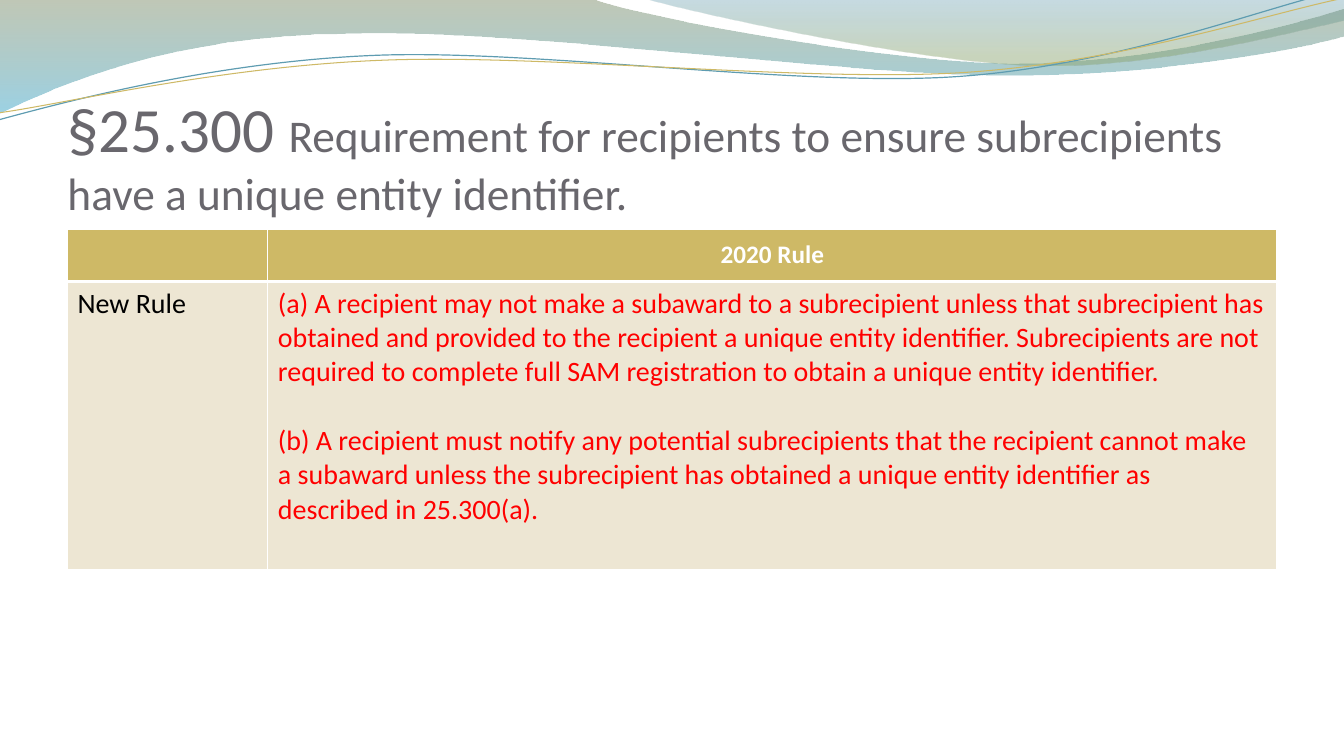
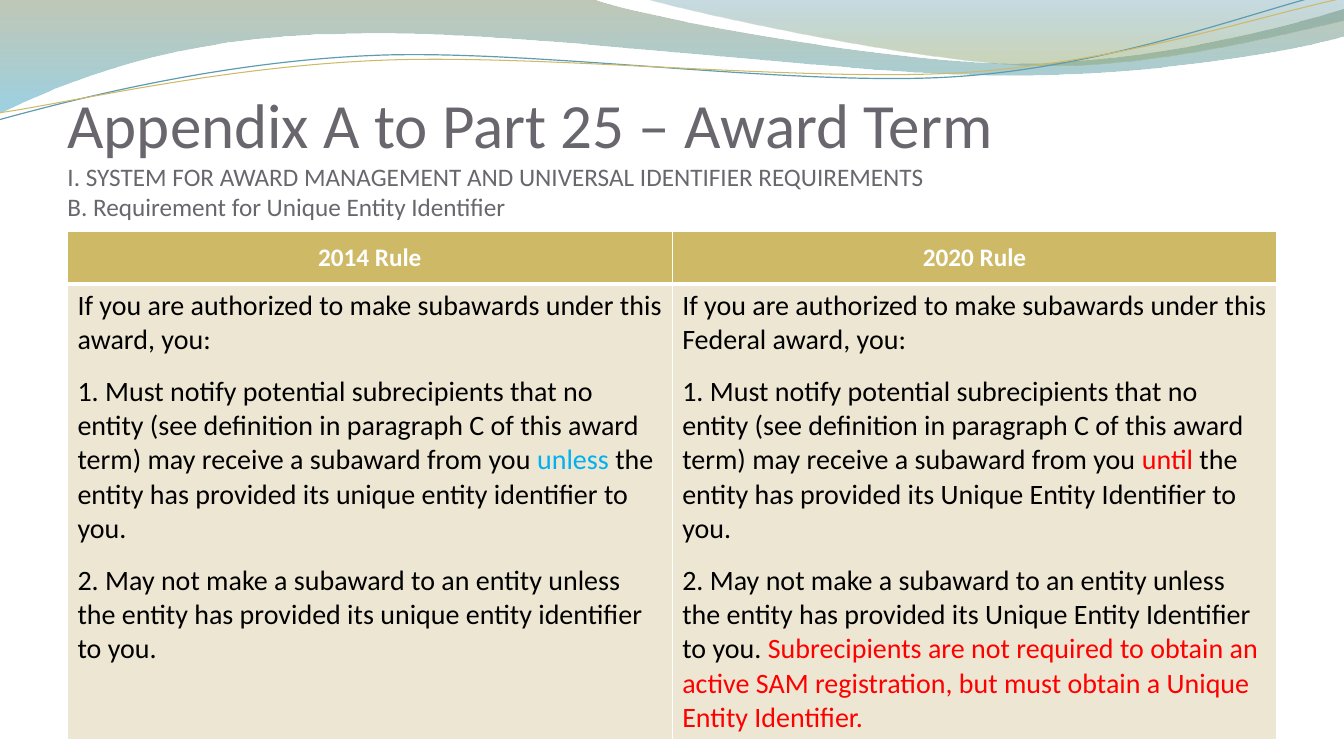
import pptx
import pptx.util
import pptx.dml.color
import pptx.enum.text
import pptx.oxml
import pptx.oxml.ns

Cm, Pt = pptx.util.Cm, pptx.util.Pt
FONT = "Calibri"
COLORS = {
    "title": "69676D", "gold": "CEB966", "sand": "EDE6D3", "white": "FFFFFF",
    "black": "000000", "red": "FF0000", "sky": "00B0F0", "teal": "5E9CB1",
    "moss": "74855E", "aqua": "4AACCE", "slate": "45889F", "leaf": "8AA36D",
}
RGB = {name: pptx.dml.color.RGBColor.from_string(value) for name, value in COLORS.items()}
MARGIN, CONTENT_WIDTH = 1.7, 30.48
HEADER_HEIGHT = 1.32

# Waves in cm: a pair is a straight step, six numbers are a Bezier curve.
# Fill stops are (position, colour, opacity in percent).
WAVES = [
    {"start": (0, -0.03),
     "steps": [(14.91, -0.03), (16.1, 0.43, 22.48, 1.6, 25.68, 1.6),
               (28.91, 1.6, 32.46, 0.66, 33.86, 0.23), (33.91, 0.91),
               (33.3, 1.12, 29.46, 1.93, 25.25, 1.9),
               (21.06, 1.9, 12.93, 0.71, 8.71, 0.86),
               (4.37, 0.89, 1.55, 2.11, -0.03, 2.87)],
     "stops": [(0, "moss", 45), (1, "aqua", 55)]},
    {"start": (16.23, -0.03),
     "steps": [(17.25, 0.28, 23.09, 1.57, 26.04, 1.65),
               (28.98, 1.75, 32.56, 0.81, 33.86, 0.53), (33.86, 0)],
     "stops": [(0, "slate", 30), (0.8, "leaf", 45)]},
    {"start": (-0.03, 3.02),
     "steps": [(1.63, 2.57, 5.36, 1.57, 9.37, 1.4),
               (13.39, 1.22, 20.07, 2.21, 24.13, 1.93),
               (28.19, 1.65, 31.8, 0.2, 33.81, -0.25)],
     "line": ("teal", 0.85)},
    {"start": (0, 2.84),
     "steps": [(1.6, 2.62, 5.54, 1.68, 9.6, 1.52),
               (13.64, 1.35, 20.22, 2.08, 24.26, 1.83),
               (28.32, 1.57, 31.88, 0.36, 33.88, -0.05)],
     "line": ("gold", 0.75)},
]

# Each body cell is a list of paragraphs, each paragraph a list of (text, colour)
NOTIFY = ("1. Must notify potential subrecipients that no entity (see definition in "
          "paragraph C of this award term) may receive a subaward from you ")
PAGES = [
    {"title": [("§25.300 ", 45),
               ("Requirement for recipients to ensure subrecipients have a unique "
                "entity identifier.", 32.4)],
     "title_top": 2.36, "table_top": 5.77, "columns": [5.05, 25.43],
     "body_height": 7.26, "gap": 24.6,
     "headers": ["", "2020 Rule"],
     "body": [
         [[("New Rule", "black")]],
         [[("(a) A recipient may not make a subaward to a subrecipient unless that "
            "subrecipient has obtained and provided to the recipient a unique entity "
            "identifier. Subrecipients are not required to complete full SAM "
            "registration to obtain a unique entity identifier.", "red")],
          [("(b) A recipient must notify any potential subrecipients that the recipient "
            "cannot make a subaward unless the subrecipient has obtained a unique entity "
            "identifier as described in 25.300(a).", "red")]]]},
    {"title": [("Appendix A to Part 25 – Award Term\n", 45),
               ("I. SYSTEM FOR AWARD MANAGEMENT AND UNIVERSAL IDENTIFIER REQUIREMENTS\n"
                "B. Requirement for Unique Entity Identifier", 18)],
     "title_top": 2.41, "table_top": 5.83, "columns": [15.24, 15.24],
     "body_height": 11.45, "gap": 12.4,
     "headers": ["2014 Rule", "2020 Rule"],
     "body": [
         [[("If you are authorized to make subawards under this award, you:", "black")],
          [(NOTIFY, "black"), ("unless", "sky"),
           (" the entity has provided its unique entity identifier to you.", "black")],
          [("2. May not make a subaward to an entity unless the entity has provided its "
            "unique entity identifier to you.", "black")]],
         [[("If you are authorized to make subawards under this Federal award, you:", "black")],
          [(NOTIFY, "black"), ("until", "red"),
           (" the entity has provided its Unique Entity Identifier to you.", "black")],
          [("2. May not make a subaward to an entity unless the entity has provided its "
            "Unique Entity Identifier to you. ", "black"),
           ("Subrecipients are not required to obtain an active SAM registration, but must "
            "obtain a Unique Entity Identifier.", "red")]]]},
]


def draw_outline(shapes, start, steps, closed):
    """Build a freeform from straight steps and Bezier curves."""
    points = [(Cm(step[i]), Cm(step[i + 1])) for step in steps for i in range(0, len(step), 2)]
    builder = shapes.build_freeform(Cm(start[0]), Cm(start[1]))
    builder.add_line_segments(points, close=closed)
    shape = builder.convert_to_shape()
    # Join the three segments of each curve into one Bezier segment
    segments = iter(shape._element.xpath(".//a:lnTo"))
    for step in steps:
        parts = [next(segments) for _ in range(len(step) // 2)]
        if len(parts) == 3:
            curve = pptx.oxml.parse_xml(f'<a:cubicBezTo {pptx.oxml.ns.nsdecls("a")}/>')
            parts[0].addprevious(curve)
            for part in parts:
                curve.append(part[0])
                part.getparent().remove(part)
    return shape


def style_cell(cell, fill, bottom_width):
    """Give a cell its white borders and its fill."""
    properties = cell._tc.get_or_add_tcPr()
    for side, width in (("L", 1), ("R", 1), ("T", 1), ("B", bottom_width)):
        properties.append(pptx.oxml.parse_xml(
            f'<a:ln{side} {pptx.oxml.ns.nsdecls("a")} w="{Pt(width)}"><a:solidFill>'
            f'<a:srgbClr val="{COLORS["white"]}"/></a:solidFill></a:ln{side}>'))
    cell.fill.solid()
    cell.fill.fore_color.rgb = RGB[fill]


deck = pptx.Presentation()
deck.slide_width, deck.slide_height = Cm(33.87), Cm(19.05)
layout = deck.slide_layouts[5]
pages = [deck.slides.add_slide(layout) for _ in PAGES]

# Waves, moved to the layout so that every page shares them
for number, wave in enumerate(WAVES):
    shape = draw_outline(pages[0].shapes, wave["start"], wave["steps"], "stops" in wave)
    shape.name = f"Wave {number + 1}"
    shape.shadow.inherit = False
    if "stops" in wave:
        shape.line.fill.background()
        shape.fill.gradient()
        shape.fill.gradient_angle = 270
        for stop, (position, color, opacity) in zip(shape.fill.gradient_stops, wave["stops"]):
            stop.position = position
            stop.color.rgb = RGB[color]
            stop._gs[0].append(pptx.oxml.parse_xml(
                f'<a:alpha {pptx.oxml.ns.nsdecls("a")} val="{opacity * 1000}"/>'))
    else:
        color, width = wave["line"]
        shape.fill.background()
        shape.line.color.rgb = RGB[color]
        shape.line.width = Pt(width)
    shape._element.nvSpPr.cNvPr.set("id", str(100 + number))
    layout.shapes._spTree.append(shape._element)

for page, content in zip(pages, PAGES):
    # Title
    title = page.shapes.title
    title.left, title.top = Cm(MARGIN), Cm(content["title_top"])
    title.width, title.height = Cm(CONTENT_WIDTH), Cm(3.18)
    frame = title.text_frame
    frame.word_wrap = True
    frame.auto_size = pptx.enum.text.MSO_AUTO_SIZE.NONE
    frame.vertical_anchor = pptx.enum.text.MSO_ANCHOR.BOTTOM
    frame.margin_left = frame.margin_right = frame.margin_bottom = 0
    frame.margin_top = Cm(0.13)
    para = frame.paragraphs[0]
    para.alignment = pptx.enum.text.PP_ALIGN.LEFT
    para.font.name = FONT
    para.font.size = Pt(content["title"][-1][1])
    para.font.color.rgb = RGB["title"]
    for text, size in content["title"]:
        for index, line in enumerate(text.split("\n")):
            if index:
                para.add_line_break()
            if line:
                span = para.add_run()
                span.text = line
                span.font.size = Pt(size)

    # Table
    table = page.shapes.add_table(
        2, 2, Cm(MARGIN), Cm(content["table_top"]), Cm(CONTENT_WIDTH),
        Cm(HEADER_HEIGHT + content["body_height"])).table
    table.horz_banding = False
    table.rows[0].height = Cm(HEADER_HEIGHT)
    table.rows[1].height = Cm(content["body_height"])
    for column, width in enumerate(content["columns"]):
        table.columns[column].width = Cm(width)

        # Header cell
        cell = table.cell(0, column)
        style_cell(cell, "gold", 3)
        cell.vertical_anchor = pptx.enum.text.MSO_ANCHOR.MIDDLE
        cell.text = content["headers"][column]
        para = cell.text_frame.paragraphs[0]
        para.alignment = pptx.enum.text.PP_ALIGN.CENTER
        para.font.name, para.font.size, para.font.bold = FONT, Pt(18), True
        para.font.color.rgb = RGB["white"]

        # Body cell
        cell = table.cell(1, column)
        style_cell(cell, "sand", 1)
        frame = cell.text_frame
        for index, spans in enumerate(content["body"][column]):
            para = frame.add_paragraph() if index else frame.paragraphs[0]
            para.font.name, para.font.size = FONT, Pt(20)
            if index:
                para.space_before = Pt(content["gap"])
            for text, color in spans:
                span = para.add_run()
                span.text = text
                span.font.color.rgb = RGB[color]

deck.save("out.pptx")
